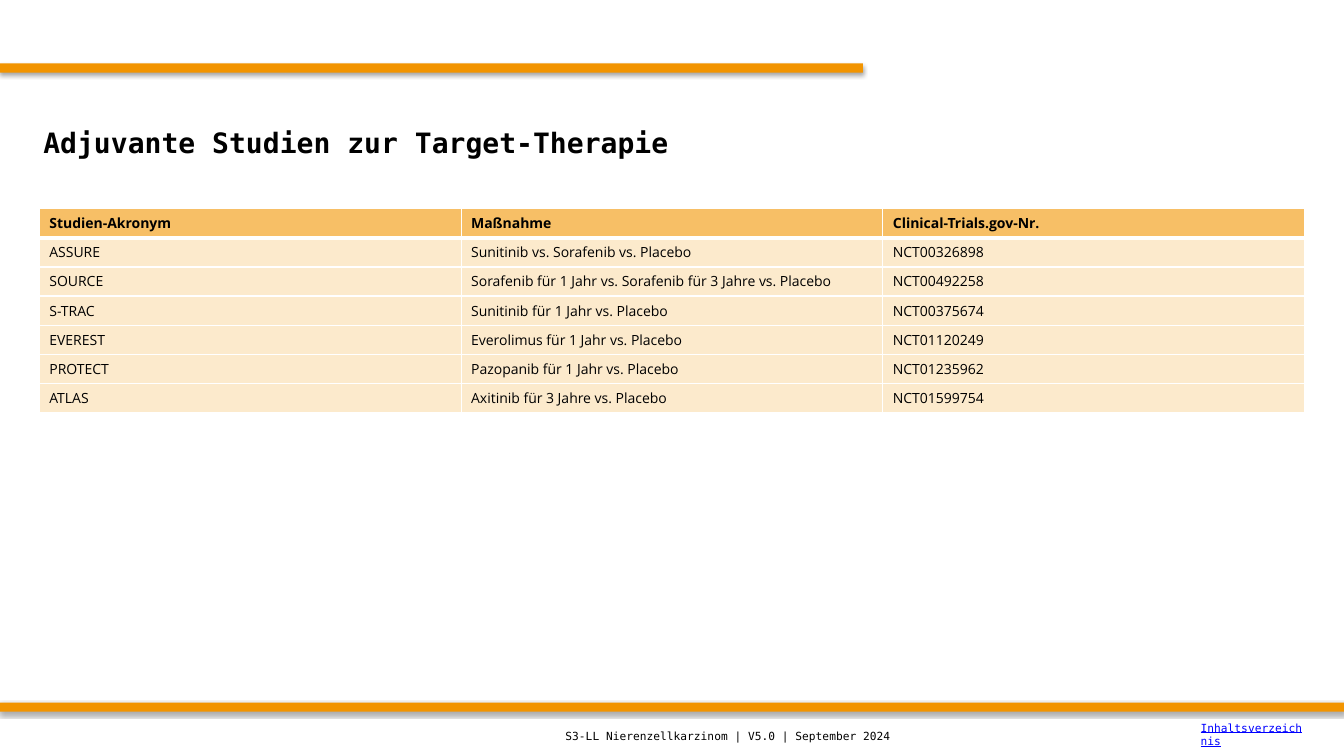
from pptx import Presentation
from pptx.dml.color import RGBColor
from pptx.enum.shapes import MSO_SHAPE as SHAPE
from pptx.enum.text import MSO_ANCHOR as ANCHOR, PP_ALIGN as ALIGN
from pptx.oxml import parse_xml
from pptx.oxml.ns import nsdecls
from pptx.util import Inches, Pt

# Content
TITLE = "Adjuvante Studien zur Target-Therapie"
STUDIES = [
    ("Studien-Akronym", "Maßnahme", "Clinical-Trials.gov-Nr."),
    ("ASSURE", "Sunitinib vs. Sorafenib vs. Placebo", "NCT00326898"),
    ("SOURCE", "Sorafenib für 1 Jahr vs. Sorafenib für 3 Jahre vs. Placebo", "NCT00492258"),
    ("S-TRAC", "Sunitinib für 1 Jahr vs. Placebo", "NCT00375674"),
    ("EVEREST", "Everolimus für 1 Jahr vs. Placebo", "NCT01120249"),
    ("PROTECT", "Pazopanib für 1 Jahr vs. Placebo", "NCT01235962"),
    ("ATLAS", "Axitinib für 3 Jahre vs. Placebo", "NCT01599754"),
]
MONO, SANS = "DejaVu Sans Mono", "Open Sans"
BARS = [(0, 0.63, 8.56, 0.09), (0, 6.97, 13.33, 0.09)]
FOOTER = [
    ("S3-LL Nierenzellkarzinom | V5.0 | September 2024", (5.51, 7.11, 5.51, 0.39),
     dict(name=MONO, size=Pt(8)), "000000"),
    ("Inhaltsverzeichnis", (11.81, 7.09, 1.22, 0.39),
     dict(name=MONO, size=Pt(8), underline=True), "0000FF"),
]


def rgb(value):
    return RGBColor.from_string(value)


def box(*lengths):
    return [Inches(v) for v in lengths]


def write(tf, text, fmt, color="000000"):
    tf.word_wrap = True
    p = tf.paragraphs[0]
    p.alignment = ALIGN.LEFT
    r = p.add_run()
    r.text = text
    for key, value in fmt.items():
        setattr(r.font, key, value)
    r.font.color.rgb = rgb(color)
    return p


def set_borders(cell, widths):
    tc_pr = cell._tc.get_or_add_tcPr()
    for side, width in widths.items():
        tc_pr.append(parse_xml(
            f'<a:ln{side} {nsdecls("a")} w="{Pt(width)}"><a:solidFill>'
            f'<a:srgbClr val="FFFFFF"/></a:solidFill></a:ln{side}>'))


prs = Presentation()
prs.slide_width, prs.slide_height = box(13.33, 7.5)
s = prs.slides.add_slide(prs.slide_layouts[5])

# Orange bars with a soft shadow below
for place in BARS:
    sp = s.shapes.add_shape(SHAPE.RECTANGLE, *box(*place))
    sp.fill.solid()
    sp.fill.fore_color.rgb = rgb("F29400")
    sp.line.fill.background()
    sp.shadow.inherit = False
    sp._element.spPr.find("{*}effectLst").append(parse_xml(
        f'<a:outerShdw {nsdecls("a")} blurRad="{Pt(3.1)}" dist="{Pt(1.8)}" dir="5400000" '
        'rotWithShape="0"><a:srgbClr val="000000"><a:alpha val="35000"/></a:srgbClr></a:outerShdw>'))

# Title
title = s.shapes.title
title.left, title.top, title.width, title.height = box(0.33, 0.83, 12.67, 1.17)
title.text_frame.vertical_anchor = ANCHOR.MIDDLE
write(title.text_frame, TITLE, dict(name=MONO, size=Pt(20), bold=True))

# Study table
rows, cols = len(STUDIES), len(STUDIES[0])
table = s.shapes.add_table(rows, cols, *box(0.39, 2.07, 12.55, 1.87)).table
for i, study in enumerate(STUDIES):
    header = i == 0
    for j, text in enumerate(study):
        cell = table.cell(i, j)
        p = write(cell.text_frame, text, dict(name=SANS, size=Pt(10), bold=header))
        p.space_after = Pt(5)
        set_borders(cell, dict(L=1, R=1, T=3 if i == 1 else 1, B=3 if header else 1))
        cell.fill.solid()
        cell.fill.fore_color.rgb = rgb("F7BF66" if header else "FCEACC")

# Footer
for text, place, fmt, color in FOOTER:
    tf = s.shapes.add_textbox(*box(*place)).text_frame
    tf.vertical_anchor = ANCHOR.MIDDLE
    write(tf, text, fmt, color)

prs.save("out.pptx")
